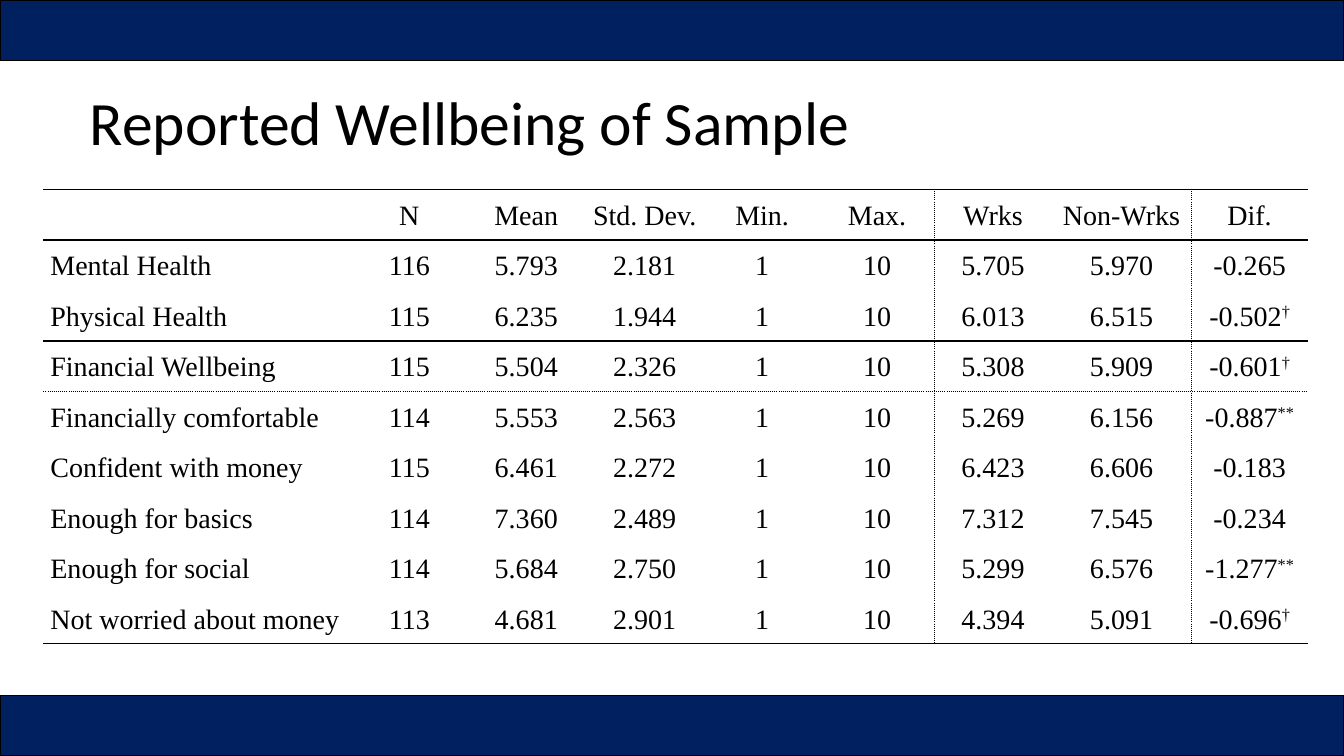
from dataclasses import dataclass

from lxml.etree import SubElement
from pptx import Presentation
from pptx.dml.color import RGBColor
from pptx.enum.shapes import MSO_SHAPE as Shape
from pptx.enum.text import MSO_ANCHOR as Anchor, PP_ALIGN as Align
from pptx.oxml.ns import qn
from pptx.util import Emu, Pt

WIDE, HIGH = 1333, 750
BLACK, NAVY = "000000", "002060"
SERIF = "Times New Roman"
COLS = [305, 116, 116, 119, 114, 114, 116, 139, 115]

# Rules by grid line, counted from the top and from the left
ACROSS = {0: "solid", 1: "solid", 3: "solid", 4: "sysDot", 9: "solid"}
DOWN = {6: "sysDot", 8: "sysDot"}

# "^" starts a superscript
ROWS = [
    ["", "N", "Mean", "Std. Dev.", "Min.", "Max.", "Wrks", "Non-Wrks", "Dif."],
    ["Mental Health", "116", "5.793", "2.181", "1", "10", "5.705", "5.970", "-0.265"],
    ["Physical Health", "115", "6.235", "1.944", "1", "10", "6.013", "6.515", "-0.502^†"],
    ["Financial Wellbeing", "115", "5.504", "2.326", "1", "10", "5.308", "5.909", "-0.601^†"],
    ["Financially comfortable", "114", "5.553", "2.563", "1", "10", "5.269", "6.156", "-0.887^**"],
    ["Confident with money", "115", "6.461", "2.272", "1", "10", "6.423", "6.606", "-0.183"],
    ["Enough for basics", "114", "7.360", "2.489", "1", "10", "7.312", "7.545", "-0.234"],
    ["Enough for social", "114", "5.684", "2.750", "1", "10", "5.299", "6.576", "-1.277^**"],
    ["Not worried about money", "113", "4.681", "2.901", "1", "10", "4.394", "5.091", "-0.696^†"],
]


@dataclass
class Bar:
    top: int
    tall: int = 60
    fill: str = NAVY


BARS = [Bar(0), Bar(HIGH - 60)]


def px(n: int) -> Emu:
    return Emu(n * 9144)


def color(code: str) -> RGBColor:
    return RGBColor.from_string(code)


def write(frame, text: str, *, size: int, font: str, align=Align.LEFT,
          lead: float = 1.0, after: int = 0) -> None:
    frame.vertical_anchor = Anchor.MIDDLE
    para = frame.paragraphs[0]
    para.alignment = align
    para.line_spacing = lead
    para.space_after = Pt(after)
    para.font.size = Pt(size)
    for i, part in enumerate(text.split("^")):
        if not part:
            continue
        run = para.add_run()
        run.text = part
        run.font.size = Pt(size)
        run.font.name = font
        run.font.color.rgb = color(BLACK)
        if i:
            run.font._element.set("baseline", "30000")


def edge(cell, side: str, dash: str | None) -> None:
    """Draw one cell border, or clear it when dash is None."""
    line = SubElement(cell._tc.get_or_add_tcPr(), qn(f"a:ln{side}"), w=str(Pt(1)))
    if dash is None:
        SubElement(line, qn("a:noFill"))
        return
    fill = SubElement(line, qn("a:solidFill"))
    SubElement(fill, qn("a:srgbClr"), val=BLACK)
    SubElement(line, qn("a:prstDash"), val=dash)


def add_title(slide) -> None:
    title = slide.shapes.title
    title.left, title.top = px(79), px(52)
    title.width, title.height = px(1150), px(145)
    write(title.text_frame, "Reported Wellbeing of Sample",
          size=44, font="Calibri", lead=0.9)


def add_grid(slide) -> None:
    table = slide.shapes.add_table(
        len(ROWS), len(COLS), px(43), px(188), px(sum(COLS)), px(451)).table
    table.first_row = table.horz_banding = False
    for col, wide in zip(table.columns, COLS):
        col.width = px(wide)
    for r, row in enumerate(ROWS):
        for c, text in enumerate(row):
            cell = table.cell(r, c)
            cell.margin_left = cell.margin_right = px(7)
            cell.margin_top = cell.margin_bottom = 0
            cell.vertical_anchor = Anchor.MIDDLE
            write(cell.text_frame, text, size=20, font=SERIF, lead=1.07,
                  after=8, align=Align.CENTER if c else Align.LEFT)
            edge(cell, "L", DOWN.get(c))
            edge(cell, "R", DOWN.get(c + 1))
            edge(cell, "T", ACROSS.get(r))
            edge(cell, "B", ACROSS.get(r + 1))
            cell.fill.background()


def add_bar(slide, bar: Bar) -> None:
    shape = slide.shapes.add_shape(
        Shape.RECTANGLE, 0, px(bar.top), px(WIDE), px(bar.tall))
    shape.shadow.inherit = False
    shape.fill.solid()
    shape.fill.fore_color.rgb = color(bar.fill)
    shape.line.color.rgb = color(BLACK)
    shape.line.width = Pt(1)


def main() -> None:
    deck = Presentation()
    deck.slide_width, deck.slide_height = px(WIDE), px(HIGH)
    slide = deck.slides.add_slide(deck.slide_layouts[5])
    add_title(slide)
    add_grid(slide)
    for bar in BARS:
        add_bar(slide, bar)
    deck.save("out.pptx")


if __name__ == "__main__":
    main()
